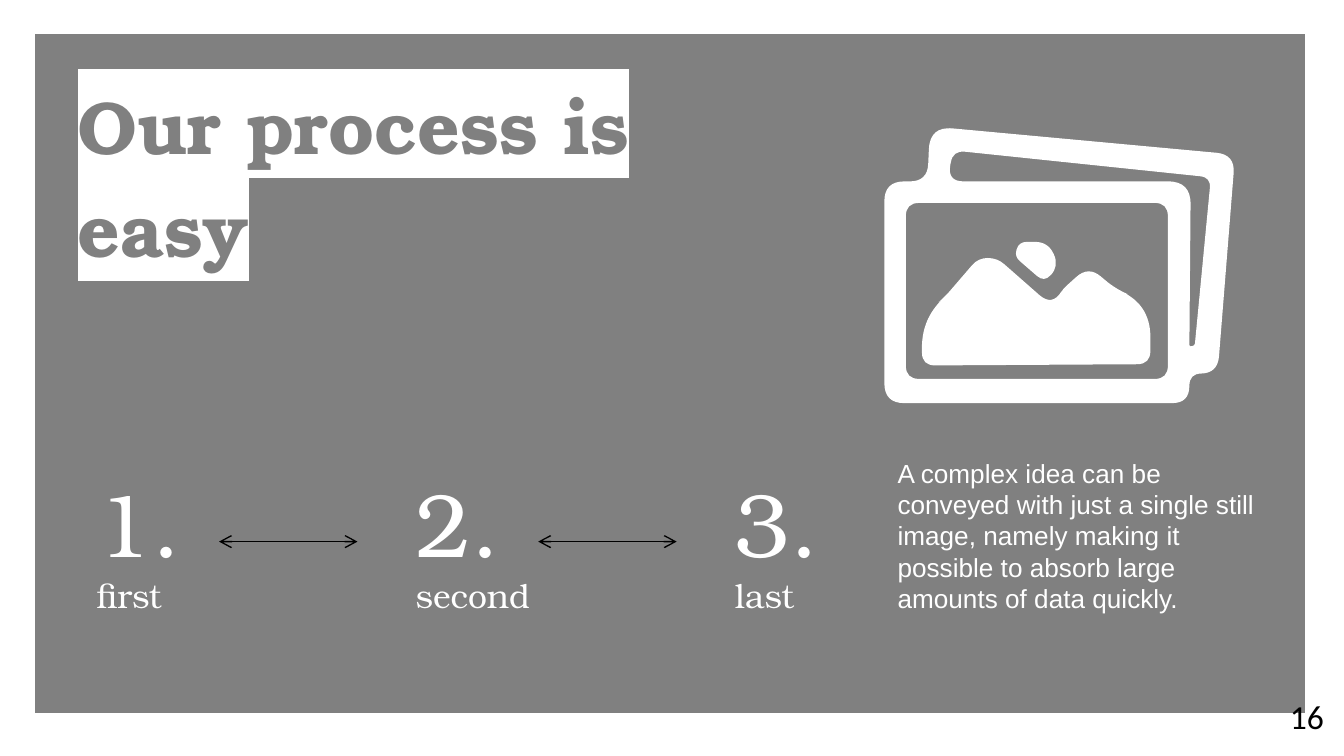
from math import hypot

from lxml import etree
from pptx import Presentation
from pptx.dml.color import RGBColor
from pptx.enum.shapes import MSO_CONNECTOR, MSO_SHAPE
from pptx.enum.text import MSO_ANCHOR, PP_ALIGN
from pptx.oxml.ns import qn
from pptx.util import Inches, Pt

RECTANGLE = MSO_SHAPE.RECTANGLE
STRAIGHT = MSO_CONNECTOR.STRAIGHT
TOP, MIDDLE, BOTTOM = MSO_ANCHOR.TOP, MSO_ANCHOR.MIDDLE, MSO_ANCHOR.BOTTOM
LEFT, RIGHT = PP_ALIGN.LEFT, PP_ALIGN.RIGHT

COLORS = {"white": "FFFFFF", "black": "000000", "panel": "0D0D0D", "gray": "808080"}
SERIF, SANS, NUMBER_FONT = "TeX Gyre Bonum", "Arial", "Calibri"
COLUMNS = 10  # the grid is square: a row is as high as a column is wide

STEPS = ["first", "second", "last"]
STEP_LEFT, STEP_PITCH = 0.62, 2.375

# Outlines are closed rings of corners: column, row, rounding
PHOTO_FRAMES = [
    [(6.58, 3, 0.15), (6.58, 1.35, 0.15), (6.9, 1.35, 0.13), (6.92, 0.94, 0.17),
     (9.19, 1.15, 0.14), (9.06, 2.78, 0.13), (8.85, 2.78, 0.09), (8.85, 3, 0.13)],
    [(6.74, 2.82, 0.1), (6.74, 1.51, 0.1), (8.69, 1.51, 0.1), (8.69, 2.82, 0.1)],
    [(8.85, 2.58, 0.01), (8.89, 2.57, 0.01), (9.01, 1.32, 0.08), (7.09, 1.12, 0.09),
     (7.05, 1.35, 0.12), (8.86, 1.35, 0.17)],
]
MOUNTAINS = [
    [(6.86, 2.72, 0.1), (6.86, 2.35, 0.24), (7.03, 2.21, 0.06), (7.28, 1.92, 0.07),
     (7.42, 1.92, 0.07), (7.83, 2.28, 0.13), (7.91, 2.15, 0.04), (8.1, 1.98, 0.12),
     (8.3, 2.15, 0.1), (8.56, 2.26, 0.25), (8.56, 2.71, 0.1)],
]
SUN = [
    [(7.55, 1.91, 0.05), (7.58, 1.8, 0.06), (7.8, 1.8, 0.1),
     (7.88, 1.98, 0.09), (7.77, 2.1, 0.07)],
]


def rounded(corners):
    """Return start, control and end point of the curve at each corner."""
    points = []
    for index, (x, y, radius) in enumerate(corners):
        ends = []
        for near in (corners[index - 1], corners[(index + 1) % len(corners)]):
            share = radius / hypot(near[0] - x, near[1] - y)
            ends.append((x + (near[0] - x) * share, y + (near[1] - y) * share))
        points += [ends[0], (x, y), ends[1]]
    return points


class SlideBuilder:
    def __init__(self, presentation):
        self.unit = presentation.slide_width / COLUMNS
        self.shapes = presentation.slides.add_slide(presentation.slide_layouts[6]).shapes

    def grid(self, *lengths):
        return [round(length * self.unit) for length in lengths]

    def color(self, name):
        return RGBColor.from_string(COLORS[name])

    def fill(self, shape, color):
        shape.shadow.inherit = False
        shape.fill.solid()
        shape.fill.fore_color.rgb = self.color(color)

    def panel(self, box, color, opacity, border, border_width):
        panel = self.shapes.add_shape(RECTANGLE, *self.grid(*box))
        self.fill(panel, color)
        tint = panel.fill._xPr.find(qn("a:solidFill"))[0]
        etree.SubElement(tint, qn("a:alpha"), val=str(opacity * 1000))
        panel.line.color.rgb = self.color(border)
        panel.line.width = Pt(border_width)

    def text(self, box, lines, font, color="white", anchor=TOP, align=LEFT,
             bold=False, spacing=None):
        """Add a text box; lines holds (wording, size) pairs."""
        frame = self.shapes.add_textbox(*self.grid(*box)).text_frame
        frame.word_wrap = True
        frame.vertical_anchor = anchor
        frame.margin_left = frame.margin_right = Inches(0.1)
        frame.margin_top = frame.margin_bottom = Inches(0.1)
        frame.text = "\n".join(wording for wording, _ in lines)
        for paragraph, (_, size) in zip(frame.paragraphs, lines):
            paragraph.alignment = align
            paragraph.line_spacing = spacing
            paragraph.font.name = font
            paragraph.font.size = Pt(size)
            paragraph.font.bold = bold
            paragraph.font.color.rgb = self.color(color)
        return frame

    def highlight(self, frame, color):
        for paragraph in frame.paragraphs:
            for run in paragraph.runs:
                marker = etree.SubElement(run.font._element, qn("a:highlight"))
                etree.SubElement(marker, qn("a:srgbClr"), val=COLORS[color])

    def double_arrow(self, left, right, row):
        arrow = self.shapes.add_connector(STRAIGHT, *self.grid(left, row, right, row))
        arrow.line.color.rgb = self.color("black")
        arrow.line.width = Pt(0.75)
        line = arrow.line._get_or_add_ln()
        for end in ("a:headEnd", "a:tailEnd"):
            etree.SubElement(line, qn(end), type="arrow")
        etree.SubElement(arrow._element.spPr, qn("a:effectLst"))

    def outline(self, parent, rings, color):
        """Draw rings as one shape; rings inside the first are holes."""
        paths = [[self.grid(*point) for point in rounded(ring)] for ring in rings]
        builder = parent.build_freeform(*paths[0][0])
        for number, path in enumerate(paths):
            if number:
                builder.move_to(*path[0])
            builder.add_line_segments(path[1:], close=True)
        shape = builder.convert_to_shape()
        self.curve_corners(shape)
        self.fill(shape, color)
        shape.line.fill.background()

    def curve_corners(self, shape):
        """Turn each control and end point pair into one quadratic curve."""
        outline = next(shape._element.iter(qn("a:path")))
        nodes = [node for node in outline if node.tag != qn("a:close")]
        for control, end in zip(nodes[1::3], nodes[2::3]):
            curve = etree.Element(qn("a:quadBezTo"))
            outline.replace(control, curve)
            outline.remove(end)
            curve.extend([control[0], end[0]])


def main():
    presentation = Presentation()
    presentation.slide_width, presentation.slide_height = Inches(10), Inches(5.625)
    slide = SlideBuilder(presentation)

    slide.panel((0.24, 0.23, 9.49, 5.1), "panel", 52, "white", 3)
    title = slide.text((0.48, 0.35, 4.5, 1.78), [("Our process is easy", 40)], SERIF,
                       color="gray", anchor=BOTTOM, bold=True, spacing=1.15)
    slide.highlight(title, "white")
    slide.text((9.38, 5.02, 0.57, 0.61), [("16", 18)], NUMBER_FONT,
               color="black", anchor=MIDDLE, align=RIGHT)

    for index, step in enumerate(STEPS):
        left = STEP_LEFT + index * STEP_PITCH
        slide.text((left, 3.1, 1.85, 1.86), [(f"{index + 1}.", 48), (step, 18)],
                   SERIF, anchor=MIDDLE)
    for index in range(len(STEPS) - 1):
        left = STEP_LEFT + index * STEP_PITCH
        slide.double_arrow(left + 1.01, left + 2.04, 4.03)

    photos = slide.shapes.add_group_shape().shapes
    for rings in (PHOTO_FRAMES, MOUNTAINS, SUN):
        slide.outline(photos, rings, "white")
    slide.text((6.58, 3.3, 3.04, 1.48), [(
        "A complex idea can be conveyed with just a single still image, namely "
        "making it possible to absorb large amounts of data quickly.", 14)], SANS)

    presentation.save("out.pptx")


if __name__ == "__main__":
    main()
